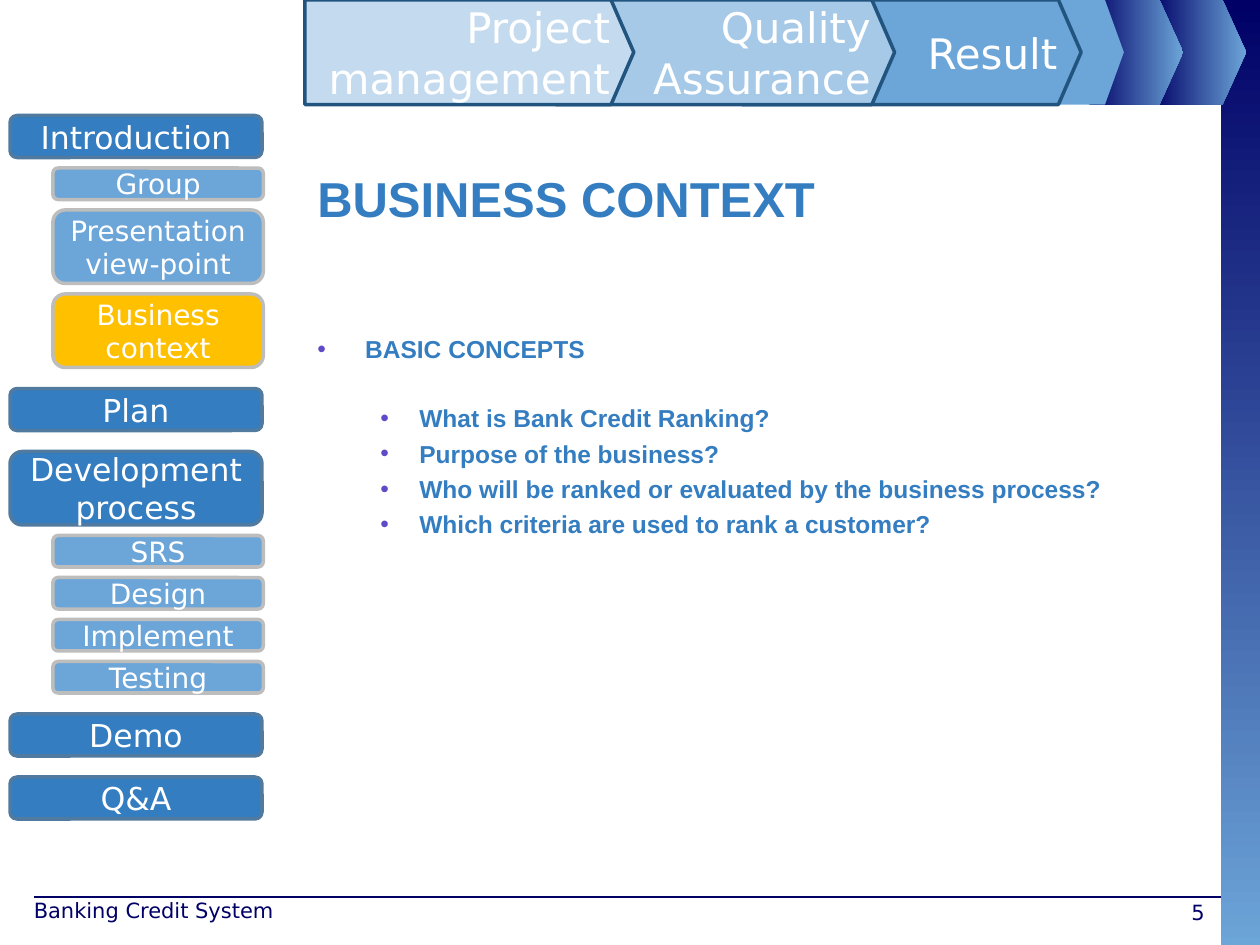
from lxml.etree import SubElement
from pptx import Presentation
from pptx.dml.color import RGBColor
from pptx.enum.shapes import MSO_CONNECTOR, MSO_SHAPE
from pptx.enum.text import MSO_ANCHOR, PP_ALIGN
from pptx.oxml.ns import qn
from pptx.util import Inches, Pt

WHITE = RGBColor(0xFF, 0xFF, 0xFF)
NAVY = RGBColor(0x00, 0x00, 0x66)
BLUE = RGBColor(0x33, 0x7D, 0xC0)
SKY = RGBColor(0x6C, 0xA5, 0xD8)
LIGHT = RGBColor(0xA7, 0xC9, 0xE8)
PALE = RGBColor(0xC4, 0xDB, 0xEF)
GOLD = RGBColor(0xFF, 0xC0, 0x00)
STEEL = RGBColor(0x50, 0x7A, 0xA0)
DEEP = RGBColor(0x22, 0x54, 0x80)
GREY = RGBColor(0xBD, 0xBD, 0xBD)
VIOLET = RGBColor(0x5D, 0x4B, 0xC7)

prs = Presentation()
prs.slide_width, prs.slide_height = Inches(10), Inches(7.5)
slide = prs.slides.add_slide(prs.slide_layouts[6])
shapes = slide.shapes


def add_block(preset, left, top, width, height, fill=None, angle=0, outline=None):
    block = shapes.add_shape(preset, Inches(left), Inches(top), Inches(width), Inches(height))
    block.shadow.inherit = False
    if fill is None:
        block.fill.gradient()
        block.fill.gradient_angle = angle
        for stop, color, position in zip(block.fill.gradient_stops, (NAVY, SKY), (0, 1)):
            stop.color.rgb = color
            stop.position = position
    else:
        block.fill.solid()
        block.fill.fore_color.rgb = fill
    if outline is None:
        block.line.fill.background()
    else:
        block.line.color.rgb = outline
        block.line.width = Pt(2)
    block.text_frame.word_wrap = True
    block.text_frame.vertical_anchor = MSO_ANCHOR.MIDDLE
    return block


def add_words(paragraph, words, size, color, font="DejaVu Sans", bold=False, align=PP_ALIGN.LEFT):
    paragraph.alignment = align
    run = paragraph.add_run()
    run.text = words
    run.font.name = font
    run.font.size = Pt(size)
    run.font.bold = bold
    run.font.color.rgb = color


footer_rule = shapes.add_connector(
    MSO_CONNECTOR.STRAIGHT, Inches(0.27), Inches(7.12), Inches(9.69), Inches(7.12))
footer_rule.line.color.rgb = NAVY
footer_rule.line.width = Pt(0.75)
SubElement(footer_rule.element.spPr, qn("a:effectLst"))

add_block(MSO_SHAPE.RECTANGLE, 9.69, 0, 0.31, 7.53, angle=270)
for left, width, fill in ((9.14, 0.75, None), (8.64, 0.75, None), (8.32, 0.6, SKY)):
    arrow = add_block(MSO_SHAPE.PENTAGON, left, 0, width, 0.83, fill)
    arrow.adjustments[0] = 0.25

for label, left, width, fill in (
    ("Result", 5.89, 2.69, SKY),
    ("Quality Assurance", 4.41, 2.69, LIGHT),
    ("Project management", 2.42, 2.61, PALE),
):
    stage = add_block(MSO_SHAPE.PENTAGON, left, 0, width, 0.83, fill, outline=DEEP)
    stage.adjustments[0] = 0.217
    add_words(stage.text_frame.paragraphs[0], label, 24, WHITE, align=PP_ALIGN.RIGHT)

title = shapes.add_textbox(Inches(2.42), Inches(1.25), Inches(7.17), Inches(0.67)).text_frame
title.word_wrap = True
title.margin_top = Inches(0.09)
add_words(title.paragraphs[0], "BUSINESS CONTEXT", 28, BLUE, "Arial", True)

concepts = shapes.add_textbox(Inches(2.42), Inches(2.58), Inches(7.17), Inches(0.67)).text_frame
concepts.word_wrap = True
concepts.margin_top = Inches(0.07)
for index, (level, space, words) in enumerate((
    (0, 0, "BASIC CONCEPTS"),
    (1, 22.8, "What is Bank Credit Ranking?"),
    (1, 3.4, "Purpose of the business?"),
    (1, 3.4, "Who will be ranked or evaluated by the business process?"),
    (1, 3.4, "Which criteria are used to rank a customer?"),
)):
    point = concepts.add_paragraph() if index else concepts.paragraphs[0]
    margin, hang = ((0.38, 0.38), (0.81, 0.31))[level]
    properties = point._p.get_or_add_pPr()
    properties.set("marL", str(Inches(margin)))
    properties.set("indent", str(-Inches(hang)))
    bullet_color = SubElement(properties, qn("a:buClr"))
    SubElement(bullet_color, qn("a:srgbClr"), val=str(VIOLET))
    SubElement(properties, qn("a:buFont"), typeface="Arial")
    SubElement(properties, qn("a:buChar"), char="•")
    point.level = level
    point.space_before = Pt(space)
    add_words(point, words, 14, BLUE, "Arial", True)

# Heights and gaps are counted in twelfths of an inch.
bottom = 9
for label, is_main, height, fill in (
    ("Introduction", True, 4, BLUE),
    ("Group", False, 3, SKY),
    ("Presentation view-point", False, 7, SKY),
    ("Business context", False, 7, GOLD),
    ("Plan", True, 4, BLUE),
    ("Development process", True, 7, BLUE),
    ("SRS", False, 3, SKY),
    ("Design", False, 3, SKY),
    ("Implement", False, 3, SKY),
    ("Testing", False, 3, SKY),
    ("Demo", True, 4, BLUE),
    ("Q&A", True, 4, BLUE),
):
    left, width, gap, size, outline = (
        (0.08, 2, 2, 18, STEEL) if is_main else (0.42, 1.67, 1, 16, GREY))
    top = bottom + gap
    button = add_block(MSO_SHAPE.ROUNDED_RECTANGLE, left, top / 12, width, height / 12,
                       fill, outline=outline)
    add_words(button.text_frame.paragraphs[0], label, size, WHITE, align=PP_ALIGN.CENTER)
    bottom = top + height

for words, left, top, height, align in (
    ("Banking Credit System", 0.17, 7.07, 0.35, PP_ALIGN.LEFT),
    ("5", 7.33, 7.09, 0.26, PP_ALIGN.RIGHT),
):
    footer = shapes.add_textbox(Inches(left), Inches(top), Inches(2.33), Inches(height)).text_frame
    footer.word_wrap = True
    add_words(footer.paragraphs[0], words, 12, NAVY, align=align)

prs.save("out.pptx")
